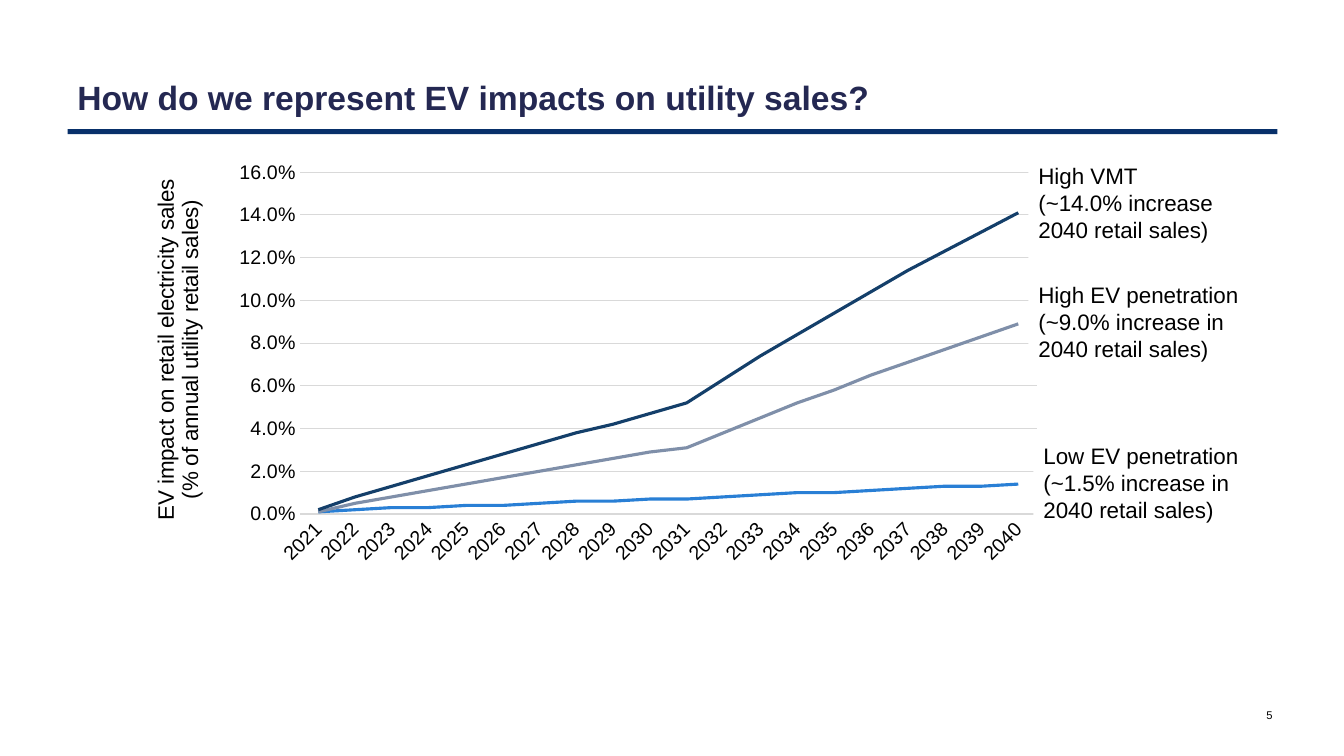
from lxml import etree
from pptx import Presentation
from pptx import util as u
from pptx.chart import data
from pptx.dml.color import RGBColor
from pptx.enum import chart as kinds, shapes, text
from pptx.oxml import parse_xml
from pptx.oxml.ns import nsdecls, qn

TITLE = "How do we represent EV impacts on utility sales?"
PAGE_NUMBER = "5"
AXIS_TITLE = ["EV impact on retail electricity sales", "(% of annual utility retail sales)"]
YEARS = [str(year) for year in range(2021, 2041)]
SCENARIOS = [
    ("Low EV penetration", "low",
     [.001, .002, .003, .003, .004, .004, .005, .006, .006, .007,
      .007, .008, .009, .01, .01, .011, .012, .013, .013, .014]),
    ("High EV penetration", "middle",
     [.001, .005, .008, .011, .014, .017, .02, .023, .026, .029,
      .031, .038, .045, .052, .058, .065, .071, .077, .083, .089]),
    ("High VMT", "high",
     [.002, .008, .013, .018, .023, .028, .033, .038, .042, .047,
      .052, .063, .074, .084, .094, .104, .114, .123, .132, .141]),
]
CALLOUTS = [
    ((10.2, 1.56, 2.38, 1.22), ["High VMT", "(~14.0% increase 2040 retail sales)"]),
    ((10.2, 2.74, 2.38, 0.91), ["High EV penetration (~9.0% increase in 2040 retail sales)"]),
    ((10.25, 4.34, 2.22, 0.91), ["Low EV penetration (~1.5% increase in 2040 retail sales)"]),
]
THEME = {
    "font": "Arial",
    "colours": {"title": "242852", "rule": "08306A", "ink": "000000", "paper": "FFFFFF",
                "grid": "D9D9D9", "low": "297FD5", "middle": "7F8FA9", "high": "143F6A"},
    "sizes": {"title": 24, "label": 16, "axis": 14, "number": 8},
}
CHART_BOX = (1.2, 1.45, 9.24, 4.54)
PLOT_LAYOUT = {"layoutTarget": "inner", "xMode": "edge", "yMode": "edge",
               "x": 0.192, "y": 0.057, "w": 0.791, "h": 0.747}
AXIS_TITLE_LAYOUT = {"xMode": "edge", "yMode": "edge", "x": 0.03, "y": 0.066}


def colour(name):
    return RGBColor.from_string(THEME["colours"][name])


def apply(target, values):
    for name, value in values.items():
        setattr(target, name, value)


def style(font, size, ink="ink", bold=False):
    apply(font, {"name": THEME["font"], "size": u.Pt(THEME["sizes"][size]), "bold": bold})
    font.color.rgb = colour(ink)


def draw_line(line, ink, width):
    line.color.rgb = colour(ink)
    line.width = u.Pt(width)


def write(frame, lines, size, ink="ink", bold=False, align=text.PP_ALIGN.LEFT):
    for index, line in enumerate(lines):
        para = frame.add_paragraph() if index else frame.paragraphs[0]
        para.alignment = align
        span = para.add_run()
        span.text = line
        style(span.font, size, ink, bold)


def add_box(page, place, fill):
    box = page.shapes.add_shape(shapes.MSO_SHAPE.RECTANGLE, *map(u.Inches, place))
    box.shadow.inherit = False
    box.fill.solid()
    box.fill.fore_color.rgb = colour(fill)
    box.line.fill.background()
    apply(box.text_frame, {"word_wrap": True, "vertical_anchor": text.MSO_ANCHOR.TOP})
    return box


def add_text(page, place, lines, anchor, **look):
    frame = page.shapes.add_textbox(*map(u.Inches, place)).text_frame
    apply(frame, {"word_wrap": True, "vertical_anchor": anchor})
    write(frame, lines, **look)


def set_layout(parent, values, after=None):
    for old in parent.findall(qn("c:layout")):
        parent.remove(old)
    layout = parse_xml(f"<c:layout {nsdecls('c')}><c:manualLayout/></c:layout>")
    for name, value in values.items():
        etree.SubElement(layout[0], qn(f"c:{name}")).set("val", str(value))
    parent.insert(0 if after is None else parent.index(after) + 1, layout)


def add_sales_chart(page):
    content = data.CategoryChartData(number_format="0.0%")
    content.categories = YEARS
    for name, ink, values in SCENARIOS:
        content.add_series(name, values)
    chart = page.shapes.add_chart(
        kinds.XL_CHART_TYPE.LINE, *map(u.Inches, CHART_BOX), content).chart
    apply(chart, {"has_legend": False, "has_title": False})
    style(chart.font, "axis")
    chart.plots[0].vary_by_categories = False
    for series, (name, ink, values) in zip(chart.plots[0].series, SCENARIOS):
        series.smooth = False
        series.marker.style = kinds.XL_MARKER_STYLE.NONE
        draw_line(series.format.line, ink, 2.25)

    years, sales = chart.category_axis, chart.value_axis
    for axis in (years, sales):
        apply(axis, {"major_tick_mark": kinds.XL_TICK_MARK.NONE,
                     "minor_tick_mark": kinds.XL_TICK_MARK.NONE})
        style(axis.tick_labels.font, "axis")
    draw_line(years.format.line, "grid", 0.75)
    years._element.find(qn("c:txPr")).find(qn("a:bodyPr")).set("rot", "-2700000")

    apply(sales, {"minimum_scale": 0, "maximum_scale": 0.16, "major_unit": 0.02,
                  "has_major_gridlines": True})
    apply(sales.tick_labels, {"number_format": "0.0%", "number_format_is_linked": False})
    sales.format.line.fill.background()
    draw_line(sales.major_gridlines.format.line, "grid", 0.75)
    frame = sales.axis_title.text_frame
    write(frame, AXIS_TITLE, "label", align=text.PP_ALIGN.CENTER)
    frame._txBody.find(qn("a:bodyPr")).set("rot", "-5400000")
    title = sales.axis_title._element
    set_layout(title, AXIS_TITLE_LAYOUT, title.find(qn("c:tx")))
    set_layout(chart._chartSpace.chart.plotArea, PLOT_LAYOUT)


def main():
    deck = Presentation()
    apply(deck, {"slide_width": u.Inches(13.33), "slide_height": u.Inches(7.5)})
    page = deck.slides.add_slide(deck.slide_layouts[6])
    add_box(page, (0.67, 1.28, 12, 0.05), "rule")
    add_text(page, (0.67, 0.71, 12, 0.5), [TITLE], text.MSO_ANCHOR.BOTTOM,
             size="title", ink="title", bold=True)
    add_text(page, (12.22, 6.89, 0.5, 0.4), [PAGE_NUMBER], text.MSO_ANCHOR.MIDDLE,
             size="number", align=text.PP_ALIGN.RIGHT)
    add_sales_chart(page)
    for place, lines in CALLOUTS:
        write(add_box(page, place, "paper").text_frame, lines, "label")
    deck.save("out.pptx")


if __name__ == "__main__":
    main()
